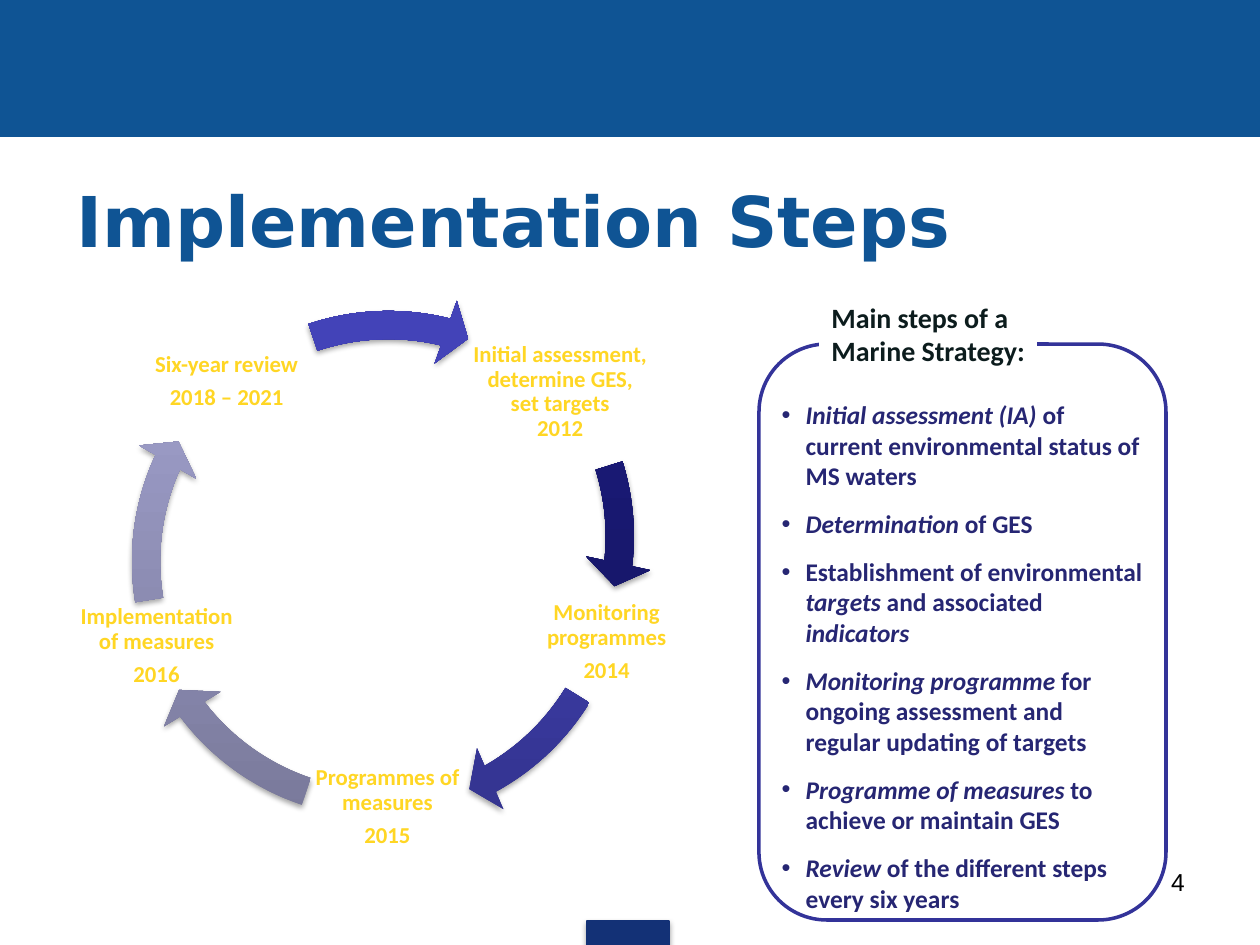
from lxml import etree
from pptx import Presentation
from pptx import util as u
from pptx.dml.color import RGBColor
from pptx.enum import shapes, text
from pptx.oxml import parse_xml
from pptx.oxml.ns import nsdecls, qn

PX_PER_INCH = 126
WHITE = RGBColor(0xFF, 0xFF, 0xFF)
BLACK = RGBColor(0x00, 0x00, 0x00)
BANNER_BLUE = RGBColor(0x0F, 0x54, 0x94)
TAB_BLUE = RGBColor(0x13, 0x31, 0x76)
FRAME_BLUE = RGBColor(0x33, 0x33, 0x99)
LIST_BLUE = RGBColor(0x26, 0x26, 0x73)
HEADING = RGBColor(0x0C, 0x1C, 0x1D)
YELLOW = RGBColor(0xFF, 0xD6, 0x24)


def shades(*codes):
    return [RGBColor.from_string(code) for code in codes]


NAVY = shades("14145D", "1A1A79", "18187B")
INDIGO = shades("33338E", "4343B8", "4141BB")
LAVENDER = shades("787899", "9C9CC7", "9C9CC9")

ARROW_SIZE = 543
# label lines, label box, arrow corner, arrow start and end angles, arrow shades
CYCLE = [
    (["Initial assessment, determine GES, set targets", "2012"],
     (399, 55, 180, 144), (39, 0), (205.62, 3.87), NAVY),
    (["Monitoring programmes", "2014"],
     (463, 322, 145, 111), (32, 34), (18.95, 36.56), INDIGO),
    (["Programmes of measures", "2015"],
     (234, 481, 165, 123), (40, 29), (65.18, 85.76), LAVENDER),
    (["Implementation of measures", "2016"],
     (0, 336, 171, 91), (42, 25), (102.42, 122.77), LAVENDER),
    (["Six-year review", "2018 – 2021"],
     (70, 59, 171, 116), (46, 27), (150.92, 170.35), INDIGO),
]

# each point is a list of (words, italic) runs
POINTS = [
    [("Initial assessment (IA)", True),
     (" of current environmental status of MS waters", False)],
    [("Determination", True), (" of GES", False)],
    [("Establishment of environmental ", False), ("targets", True),
     (" and associated ", False), ("indicators", True)],
    [("Monitoring programme", True),
     (" for ongoing assessment and regular updating of targets", False)],
    [("Programme of measures ", True), ("to achieve or maintain GES", False)],
    [("Review", True), (" of the different steps every six years", False)],
]


def px(length):
    return u.Emu(round(length * 914400 / PX_PER_INCH))


def place(shape, box):
    shape.left, shape.top, shape.width, shape.height = map(px, box)


def style(paragraph, name, size, color, bold=True):
    font = paragraph.font
    font.name, font.size, font.bold = name, u.Pt(size), bold
    font.color.rgb = color


def hang(paragraph, indent):
    properties = paragraph._p.get_or_add_pPr()
    properties.set("marL", str(px(indent)))
    properties.set("indent", str(-px(indent)))
    return properties


def add_block(slide, kind, box, fill=None, line=None, width=0.75):
    shape = slide.shapes.add_shape(kind, *map(px, box))
    shape.shadow.inherit = False
    if fill is not None:
        shape.fill.solid()
        shape.fill.fore_color.rgb = fill
    if line is None:
        shape.line.fill.background()
    else:
        shape.line.color.rgb = line
        shape.line.width = u.Pt(width)
    return shape


def cast_shadow(shape):
    effects = shape._element.spPr.find(qn("a:effectLst"))
    effects.append(parse_xml(
        f'<a:outerShdw {nsdecls("a")} blurRad="40000" dist="23000" dir="5400000" '
        'rotWithShape="0"><a:srgbClr val="000000"><a:alpha val="35000"/>'
        '</a:srgbClr></a:outerShdw>'))


def shade_upwards(shape, colors):
    shape.fill.gradient()
    gradient = shape._element.spPr.find(qn("a:gradFill"))
    for child in list(gradient):
        gradient.remove(child)
    stops = etree.SubElement(gradient, qn("a:gsLst"))
    for position, color in zip((0, 80000, 100000), colors):
        stop = etree.SubElement(stops, qn("a:gs"), pos=str(position))
        etree.SubElement(stop, qn("a:srgbClr"), val=str(color))
    etree.SubElement(gradient, qn("a:lin"), ang="16200000", scaled="0")


def add_bands(slide):
    rectangle = shapes.MSO_SHAPE.RECTANGLE
    add_block(slide, rectangle, (0, 0, 1260, 136), BANNER_BLUE, BANNER_BLUE)
    tab = add_block(slide, rectangle, (587, 921, 82, 28), TAB_BLUE, TAB_BLUE)
    cast_shadow(tab)


def fill_title(slide, box):
    title = slide.shapes.title
    place(title, box)
    frame = title.text_frame
    frame.text = "Implementation Steps"
    frame.auto_size = text.MSO_AUTO_SIZE.NONE
    frame.vertical_anchor = text.MSO_ANCHOR.MIDDLE
    paragraph = frame.paragraphs[0]
    paragraph.alignment = text.PP_ALIGN.LEFT
    hang(paragraph, 49)
    style(paragraph, "DejaVu Sans", 40, BANNER_BLUE)


def add_page_number(slide, box):
    number = slide.shapes.add_textbox(*map(px, box))
    number.text_frame.word_wrap = True
    paragraph = number.text_frame.paragraphs[0]
    paragraph.text = "4"
    paragraph.alignment = text.PP_ALIGN.RIGHT
    style(paragraph, "Arial", 14, BLACK, bold=False)


def add_steps_panel(slide, left, top):
    # Rounded frame, kept behind the list
    body = slide.placeholders[1]
    outline = add_block(slide, shapes.MSO_SHAPE.ROUNDED_RECTANGLE,
                        (left, top + 50, 407, 576), WHITE, FRAME_BLUE, 2)
    body._element.addprevious(outline._element)

    # Bulleted list
    place(body, (left + 10, top + 99, 387, 532))
    frame = body.text_frame
    frame.auto_size = text.MSO_AUTO_SIZE.SHAPE_TO_FIT_TEXT
    for index, runs in enumerate(POINTS):
        paragraph = frame.add_paragraph() if index else frame.paragraphs[0]
        paragraph.space_before = u.Pt(10 if index else 0)
        properties = hang(paragraph, 24)
        etree.SubElement(properties, qn("a:buFont"), typeface="Arial")
        etree.SubElement(properties, qn("a:buChar"), char="•")
        style(paragraph, "Calibri", 14.5, LIST_BLUE)
        for words, italic in runs:
            run = paragraph.add_run()
            run.text = words
            run.font.italic = italic

    # Heading that interrupts the frame
    heading = add_block(slide, shapes.MSO_SHAPE.RECTANGLE,
                        (left + 60, top, 218, 81), WHITE)
    frame = heading.text_frame
    frame.word_wrap = True
    frame.margin_right = 0
    frame.vertical_anchor = text.MSO_ANCHOR.TOP
    paragraph = frame.paragraphs[0]
    paragraph.text = "Main steps of a Marine Strategy:"
    paragraph.alignment = text.PP_ALIGN.LEFT
    style(paragraph, "Calibri", 16, HEADING)


def add_cycle_label(slide, box, lines, gap):
    label = slide.shapes.add_textbox(*map(px, box))
    frame = label.text_frame
    frame.word_wrap = True
    frame.vertical_anchor = text.MSO_ANCHOR.MIDDLE
    frame.margin_left = frame.margin_right = px(2)
    frame.margin_top = frame.margin_bottom = px(2)
    frame.text = "\n".join(lines)
    for paragraph in frame.paragraphs:
        paragraph.alignment = text.PP_ALIGN.CENTER
        paragraph.line_spacing = 0.9
        paragraph.space_after = u.Pt(gap)
        style(paragraph, "Calibri", 13, YELLOW)


def add_cycle(slide, left, top):
    for index, (lines, label, corner, (start, end), colors) in enumerate(CYCLE):
        x, y, width, height = label
        add_cycle_label(slide, (left + x, top + y, width, height), lines,
                        4.9 if index else 0)
        arrow = add_block(slide, shapes.MSO_SHAPE.CIRCULAR_ARROW,
                          (left + corner[0], top + corner[1], ARROW_SIZE, ARROW_SIZE))
        for position, value in enumerate((0.052, 3.36, end, start, 0.061)):
            arrow.adjustments[position] = value
        shade_upwards(arrow, colors)
        cast_shadow(arrow)


def main():
    presentation = Presentation()
    presentation.slide_width, presentation.slide_height = u.Inches(10), u.Inches(7.5)
    slide = presentation.slides.add_slide(presentation.slide_layouts[1])
    add_bands(slide)
    fill_title(slide, (64, 155, 1134, 129))
    add_page_number(slide, (903, 861, 294, 66))
    add_steps_panel(slide, 759, 294)
    add_cycle(slide, 71, 265)
    presentation.save("out.pptx")


if __name__ == "__main__":
    main()
